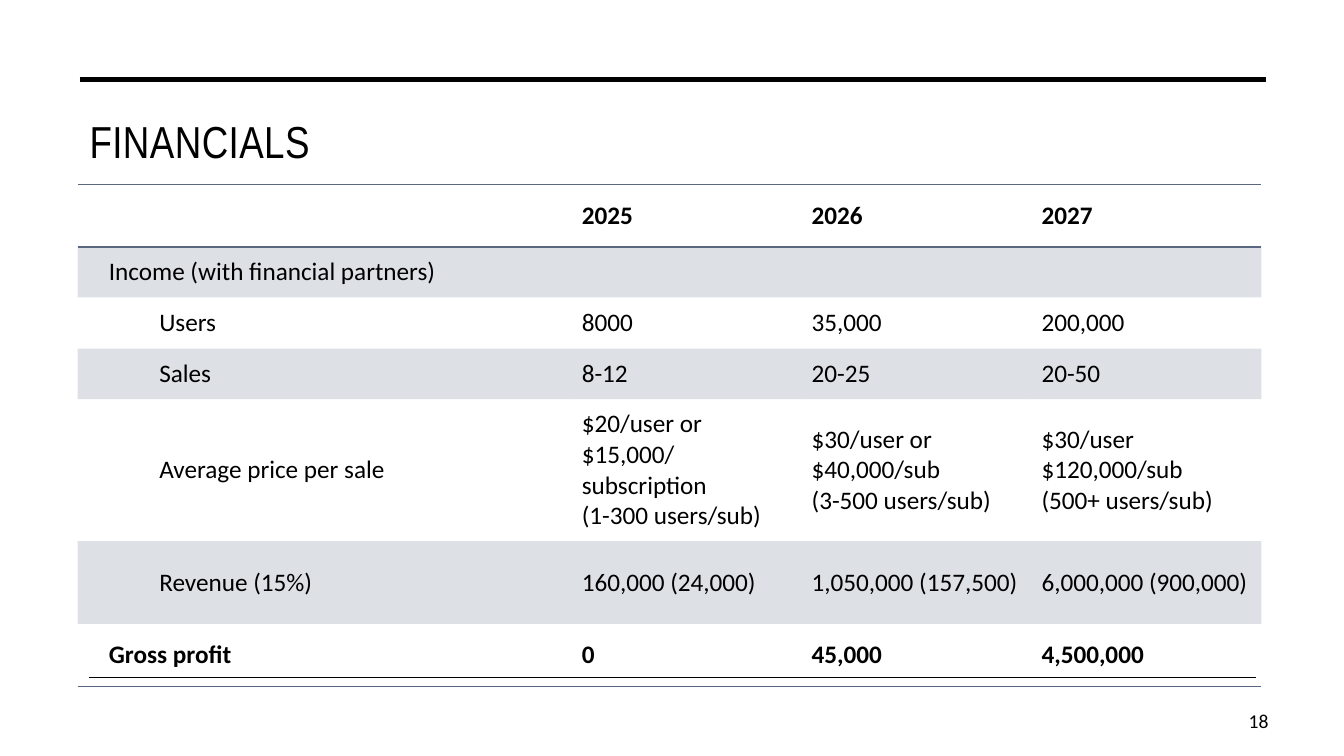
from lxml.etree import SubElement
from pptx import Presentation
from pptx.dml.color import RGBColor
from pptx.enum.shapes import MSO_CONNECTOR
from pptx.enum.text import MSO_ANCHOR, PP_ALIGN
from pptx.oxml.ns import qn
from pptx.util import Inches, Pt

BLACK = "000000"
SLATE = "596781"
NO_STYLE = "{2D5ABB26-0587-4C30-8999-92F81FD0307C}"
COLUMNS = [4.9, 2.28, 2.28, 2.28]
HEIGHTS = [0.62, 0.5, 0.51, 0.5, 1.41, 0.82, 0.62]
ROWS = [
    ["", "2025", "2026", "2027"],
    ["Income (with financial partners)", "", "", ""],
    ["Users", "8000", "35,000", "200,000"],
    ["Sales", "8-12", "20-25", "20-50"],
    ["Average price per sale",
     "$20/user or\n$15,000/\nsubscription\n(1-300 users/sub)",
     "$30/user or\n$40,000/sub\n(3-500 users/sub)",
     "$30/user\n$120,000/sub\n(500+ users/sub)"],
    ["Revenue (15%)", "160,000 (24,000)", "1,050,000 (157,500)", "6,000,000 (900,000)"],
    ["Gross profit", "0", "45,000", "4,500,000"],
]
LAST = len(ROWS) - 1


def color(value):
    return RGBColor.from_string(value)


def write(tf, text, size=18, font="Calibri", bold=False, align=PP_ALIGN.LEFT, indent=0):
    for i, line in enumerate(text.split("\n")):
        p = tf.paragraphs[0] if i == 0 else tf.add_paragraph()
        p.alignment = align
        if indent:
            pPr = p._p.get_or_add_pPr()
            pPr.set("marL", str(Inches(indent)))
            pPr.set("indent", "0")
            p.level = 1
        p.font.size = Pt(size)
        if line:
            r = p.add_run()
            r.text = line
            r.font.name = font
            r.font.size = Pt(size)
            r.font.bold = bold
            r.font.color.rgb = color(BLACK)


def add_text(s, x, y, w, h, text, anchor=MSO_ANCHOR.TOP, **fmt):
    tf = s.shapes.add_textbox(Inches(x), Inches(y), Inches(w), Inches(h)).text_frame
    tf.word_wrap = True
    tf.vertical_anchor = anchor
    write(tf, text, **fmt)
    return tf


def add_rule(s, x1, x2, y, width):
    line = s.shapes.add_connector(
        MSO_CONNECTOR.STRAIGHT, Inches(x1), Inches(y), Inches(x2), Inches(y))
    line.line.color.rgb = color(BLACK)
    line.line.width = Pt(width)
    SubElement(line._element.spPr, qn("a:effectLst"))


def add_border(cell, side):
    ln = SubElement(cell._tc.get_or_add_tcPr(), qn(f"a:ln{side}"), w=str(Pt(1)))
    fill = SubElement(ln, qn("a:solidFill"))
    SubElement(fill, qn("a:srgbClr"), val=SLATE)


def fill_cell(cell, banded):
    if not banded:
        cell.fill.background()
        return
    cell.fill.solid()
    cell.fill.fore_color.rgb = color(SLATE)
    tint = cell._tc.tcPr.find(qn("a:solidFill")).find(qn("a:srgbClr"))
    SubElement(tint, qn("a:alpha"), val="20000")


def add_financials(s, x, y):
    table = s.shapes.add_table(
        len(ROWS), len(COLUMNS), Inches(x), Inches(y),
        Inches(sum(COLUMNS)), Inches(sum(HEIGHTS))).table
    table._tbl.tblPr.find(qn("a:tableStyleId")).text = NO_STYLE
    for column, width in zip(table.columns, COLUMNS):
        column.width = Inches(width)
    for i, (values, height) in enumerate(zip(ROWS, HEIGHTS)):
        table.rows[i].height = Inches(height)
        for j, value in enumerate(values):
            cell = table.cell(i, j)
            cell.vertical_anchor = MSO_ANCHOR.MIDDLE
            if j == 0 and i > 0:
                cell.margin_left = Inches(0.31)
            if i == 0:
                add_border(cell, "T")
            if i in (0, LAST):
                add_border(cell, "B")
            fill_cell(cell, i % 2 == 1)
            write(cell.text_frame, value, bold=i in (0, LAST),
                  indent=0.5 if j == 0 and 1 < i < LAST else 0)


def main():
    prs = Presentation()
    prs.slide_width, prs.slide_height = Inches(13.33), Inches(7.5)
    s = prs.slides.add_slide(prs.slide_layouts[6])
    add_rule(s, 0.88, 12.46, 6.72, 1)
    add_rule(s, 0.79, 12.56, 0.79, 3.5)
    title = add_text(s, 0.79, 1.08, 11.8, 1.15, "FINANCIALS", size=32, font="Arial Narrow")
    title.paragraphs[0].runs[0].font._element.set("spc", "30")
    add_financials(s, 0.77, 1.83)
    add_text(s, 11.94, 6.95, 0.74, 0.4, "18", anchor=MSO_ANCHOR.MIDDLE,
             size=14, align=PP_ALIGN.RIGHT)
    prs.save("out.pptx")


if __name__ == "__main__":
    main()
